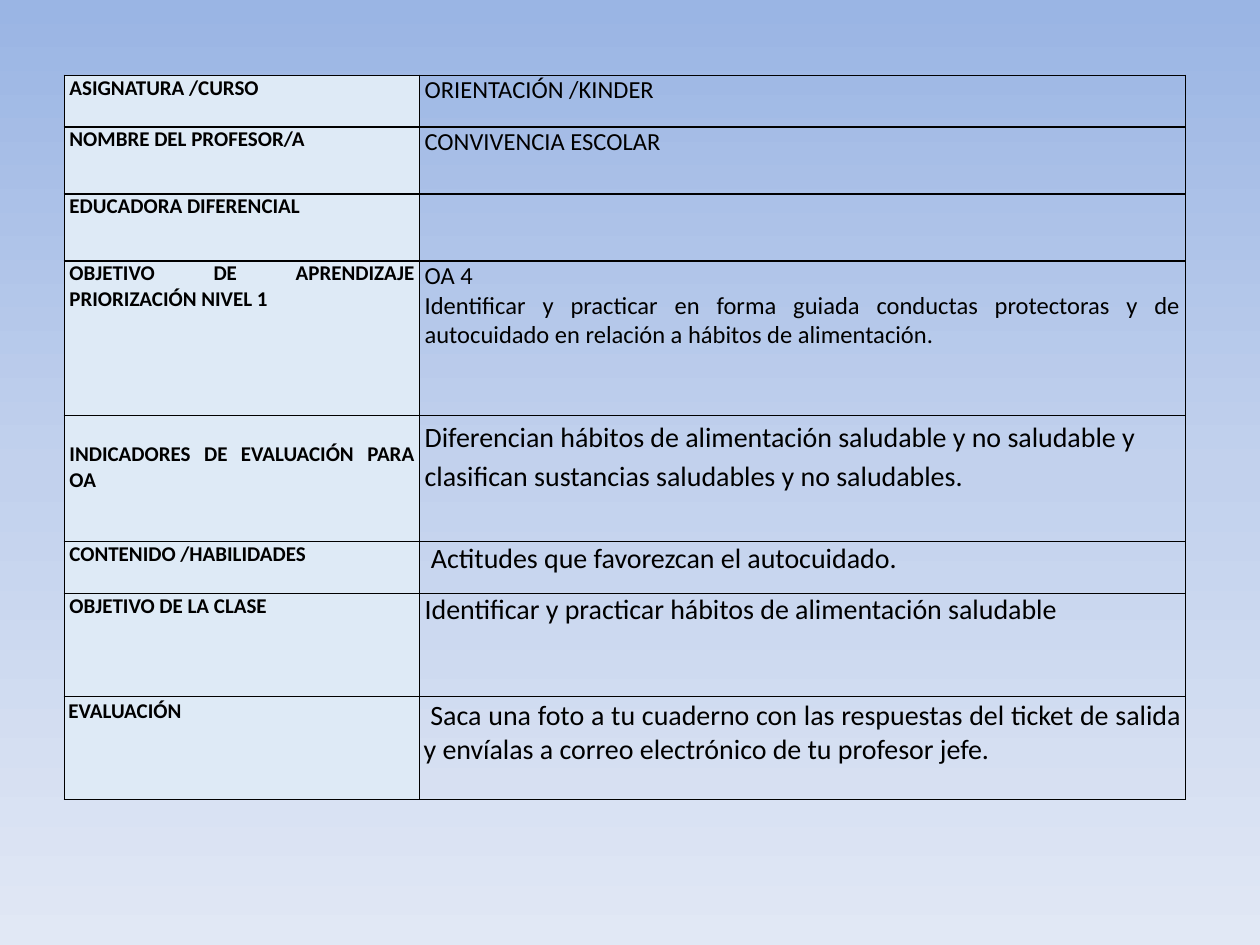
from copy import deepcopy

from lxml import etree
from pptx import Presentation
from pptx.dml.color import RGBColor
from pptx.enum.text import PP_ALIGN
from pptx.oxml.ns import qn
from pptx.util import Cm, Pt

LEFT, JUST = PP_ALIGN.LEFT, PP_ALIGN.JUSTIFY
FONT = "Calibri"
COLORS = {"text": "000000", "line": "000000", "label": "DEEAF6"}
SKY = ["9AB5E4", "C2D1ED", "E1E8F5"]
COLS = [7.16, 15.44]

# height, label, size of the answer, answer paragraphs (each a list of runs)
ROWS = [
    (1.04, "ASIGNATURA /CURSO", 14, [["ORIENTACIÓN /KINDER"]]),
    (1.35, "NOMBRE DEL PROFESOR/A", 14, [["CONVIVENCIA ESCOLAR"]]),
    (1.35, "EDUCADORA DIFERENCIAL", 14, []),
    (3.12, "OBJETIVO DE APRENDIZAJE PRIORIZACIÓN NIVEL 1", 14, [
        ["OA 4"],
        ["Identificar y practicar en forma guiada conductas protectoras y de "
         "autocuidado en relación a hábitos de alimentación."]]),
    (2.54, "INDICADORES DE EVALUACIÓN PARA OA", 16, [
        ["Diferencian hábitos de alimentación saludable y no saludable y "
         "clasifican sustancias saludables y no saludables."]]),
    (1.04, "CONTENIDO /HABILIDADES", 16,
     [[" Actitudes que favorezcan el autocuidado."]]),
    (2.08, "OBJETIVO DE LA CLASE", 16,
     [["Identificar y practicar hábitos de alimentación saludable"]]),
    (2.08, "EVALUACIÓN", 16, [
        [" ", "Saca una foto a tu cuaderno con las respuestas del ticket de "
         "salida y envíalas a correo electrónico de tu profesor jefe."]]),
]
GOALS, GRADE = 4, 7


def paint_sky(slide):
    """Fill the background with a gradient from top to bottom."""
    fill = slide.background.fill
    fill.gradient()
    fill.gradient_angle = 270
    first = fill.gradient_stops[0]
    stops = slide.element.find(".//" + qn("a:gsLst"))
    stops.insert(1, deepcopy(stops[0]))
    del first
    for i, (stop, color) in enumerate(zip(fill.gradient_stops, SKY)):
        stop.color.rgb = RGBColor.from_string(color)
        stop.position = i / 2


def add_lines(cell):
    """Draw a thin line on all four sides of a cell."""
    props = cell._tc.get_or_add_tcPr()
    for side in ("lnL", "lnR", "lnT", "lnB"):
        line = etree.SubElement(props, qn("a:" + side), w=str(Pt(1)))
        fill = etree.SubElement(line, qn("a:solidFill"))
        etree.SubElement(fill, qn("a:srgbClr"), val=COLORS["line"])


def set_pad(cell, side, top):
    cell.margin_left = cell.margin_right = Cm(side)
    cell.margin_top = cell.margin_bottom = Cm(top)


def write(cell, paras, size, bold=False, align=JUST, space=None):
    frame = cell.text_frame
    for i, runs in enumerate(paras):
        para = frame.add_paragraph() if i else frame.paragraphs[0]
        para.alignment = align
        para.line_spacing = space
        for text in runs:
            run = para.add_run()
            run.text = text
            font = run.font
            font.name, font.size, font.bold = FONT, Pt(size), bold
            font.color.rgb = RGBColor.from_string(COLORS["text"])


def add_plan(slide):
    """Add the table with the plan of the class."""
    frame = slide.shapes.add_table(len(ROWS), len(COLS), Cm(1.3), Cm(1.52),
                                   Cm(sum(COLS)), Cm(sum(r[0] for r in ROWS)))
    table = frame.table
    table.first_row = table.horz_banding = False
    for col, width in zip(table.columns, COLS):
        col.width = Cm(width)
    for i, (height, name, size, paras) in enumerate(ROWS):
        table.rows[i].height = Cm(height)
        label, answer = table.cell(i, 0), table.cell(i, 1)
        for cell in (label, answer):
            set_pad(cell, *((0.08, 0.05) if i == GRADE else (0.1, 0)))
            add_lines(cell)
        label.fill.solid()
        label.fill.fore_color.rgb = RGBColor.from_string(COLORS["label"])
        answer.fill.background()
        write(label, [[name]], 12, bold=True)
        if i == GOALS:
            label.margin_top = Cm(0.53)
            write(answer, paras, size, align=LEFT, space=1.15)
        else:
            write(answer, paras, size)


def main():
    deck = Presentation()
    deck.slide_width, deck.slide_height = Cm(25.4), Cm(19.05)
    slide = deck.slides.add_slide(deck.slide_layouts[6])
    paint_sky(slide)
    add_plan(slide)
    deck.save("out.pptx")


if __name__ == "__main__":
    main()
